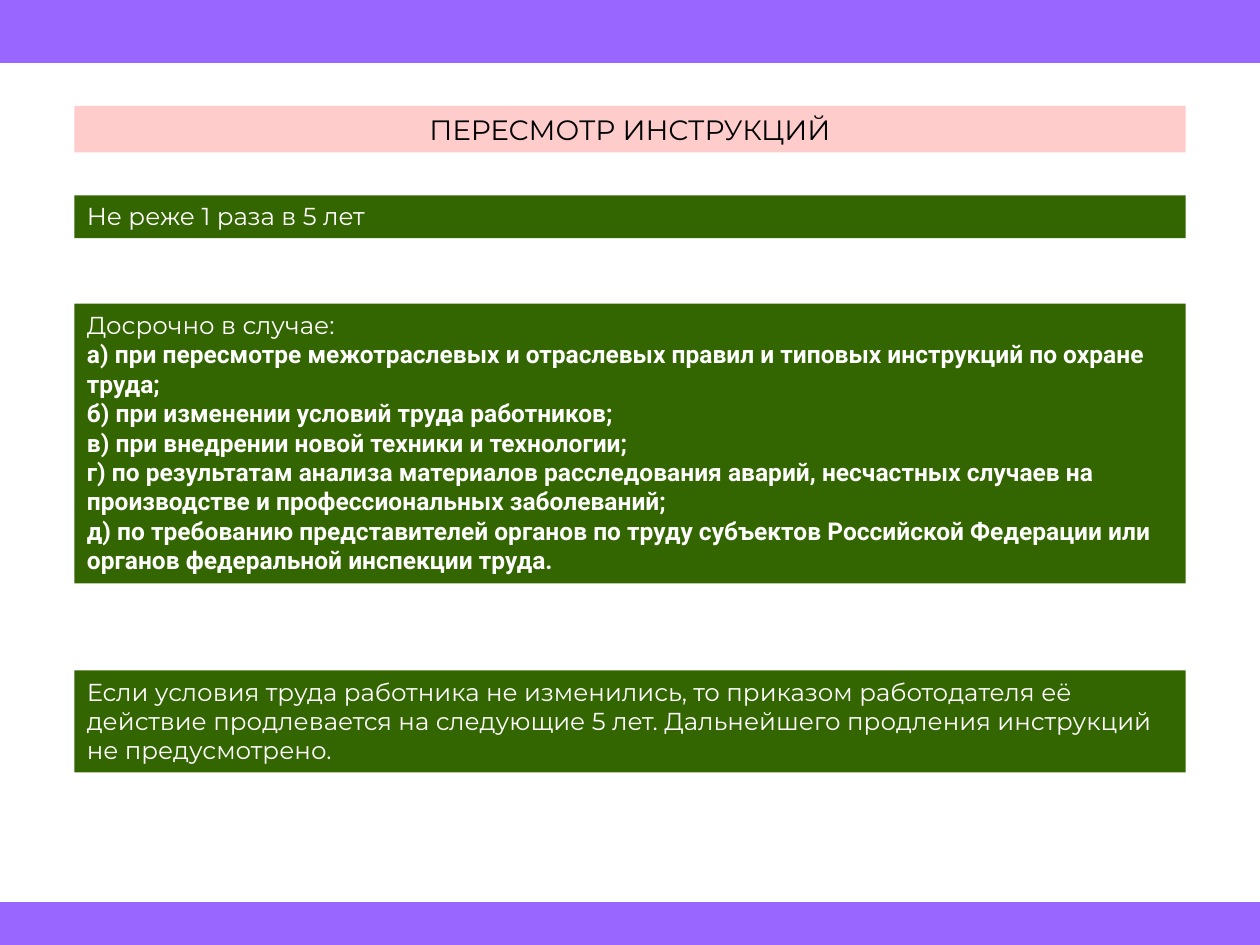
from dataclasses import dataclass

from pptx import Presentation
from pptx.dml.color import RGBColor
from pptx.enum.shapes import MSO_SHAPE
from pptx.enum.text import MSO_ANCHOR, MSO_AUTO_SIZE, PP_ALIGN
from pptx.oxml import parse_xml
from pptx.oxml.ns import nsdecls
from pptx.shapes.base import BaseShape
from pptx.slide import Slide
from pptx.util import Inches, Pt

HUES = {
    "band": "9966FF",
    "title": "FFCCCC",
    "panel": "336600",
    "dark": "000000",
    "light": "FFFFFF",
}
LEFT, WIDTH = 0.59, 8.82


@dataclass
class Band:
    top: float
    height: float


@dataclass
class Panel:
    top: float
    height: float
    lines: list[str]
    fill: str = "panel"
    ink: str = "light"
    size: int = 14
    align: PP_ALIGN = PP_ALIGN.LEFT


BANDS = [Band(0, 0.5), Band(7.16, 0.34)]
TITLE = Panel(0.84, 0.37, ["ПЕРЕСМОТР ИНСТРУКЦИЙ"], "title", "dark", 16, PP_ALIGN.CENTER)
TERM = Panel(1.55, 0.34, ["Не реже 1 раза в 5 лет"])
CASES = Panel(2.41, 2.22, [
    "Досрочно в случае:",
    "а) при пересмотре межотраслевых и отраслевых правил и типовых инструкций по охране труда;",
    "б) при изменении условий труда работников;",
    "в) при внедрении новой техники и технологии;",
    "г) по результатам анализа материалов расследования аварий, несчастных случаев на "
    "производстве и профессиональных заболеваний;",
    "д) по требованию представителей органов по труду субъектов Российской Федерации или "
    "органов федеральной инспекции труда.",
])
RENEWAL = Panel(5.32, 0.81, [
    "Если условия труда работника не изменились, то приказом работодателя её действие "
    "продлевается на следующие 5 лет. Дальнейшего продления инструкций не предусмотрено.",
])


def paint(shape: BaseShape, hue: str) -> None:
    shape.fill.solid()
    shape.fill.fore_color.rgb = RGBColor.from_string(HUES[hue])
    shape.line.fill.background()


def add_rect(slide: Slide, left: float, top: float, width: float, height: float) -> BaseShape:
    shape = slide.shapes.add_shape(
        MSO_SHAPE.RECTANGLE, Inches(left), Inches(top), Inches(width), Inches(height))
    shape.shadow.inherit = False
    return shape


def fill_panel(shape: BaseShape, panel: Panel) -> None:
    shape.left, shape.top = Inches(LEFT), Inches(panel.top)
    shape.width, shape.height = Inches(WIDTH), Inches(panel.height)
    paint(shape, panel.fill)
    frame = shape.text_frame
    frame.word_wrap = True
    # Panels keep their set height
    frame.auto_size = MSO_AUTO_SIZE.NONE
    frame.vertical_anchor = MSO_ANCHOR.TOP
    frame.text = "\n".join(panel.lines)
    for i, para in enumerate(frame.paragraphs):
        para.alignment = panel.align
        para.space_before = Pt(0)
        # Plain lines without bullet or indent
        props = para._p.get_or_add_pPr()
        props.set("marL", "0")
        props.set("indent", "0")
        props.append(parse_xml(f"<a:buNone {nsdecls('a')}/>"))
        # The lead line is light, the lettered cases are bold
        font = para.runs[0].font
        font.name = "Roboto" if i else "Montserrat"
        font.bold = i > 0
        font.size = Pt(panel.size)
        font.color.rgb = RGBColor.from_string(HUES[panel.ink])


def main() -> None:
    deck = Presentation()
    deck.slide_width, deck.slide_height = Inches(10), Inches(7.5)
    slide = deck.slides.add_slide(deck.slide_layouts[1])

    # Top and bottom bands
    for band in BANDS:
        paint(add_rect(slide, 0, band.top, 10, band.height), "band")

    # Title and list
    fill_panel(slide.shapes.title, TITLE)
    fill_panel(slide.placeholders[1], CASES)

    # Single-statement panels
    for panel in (TERM, RENEWAL):
        fill_panel(add_rect(slide, LEFT, panel.top, WIDTH, panel.height), panel)

    deck.save("out.pptx")


if __name__ == "__main__":
    main()
